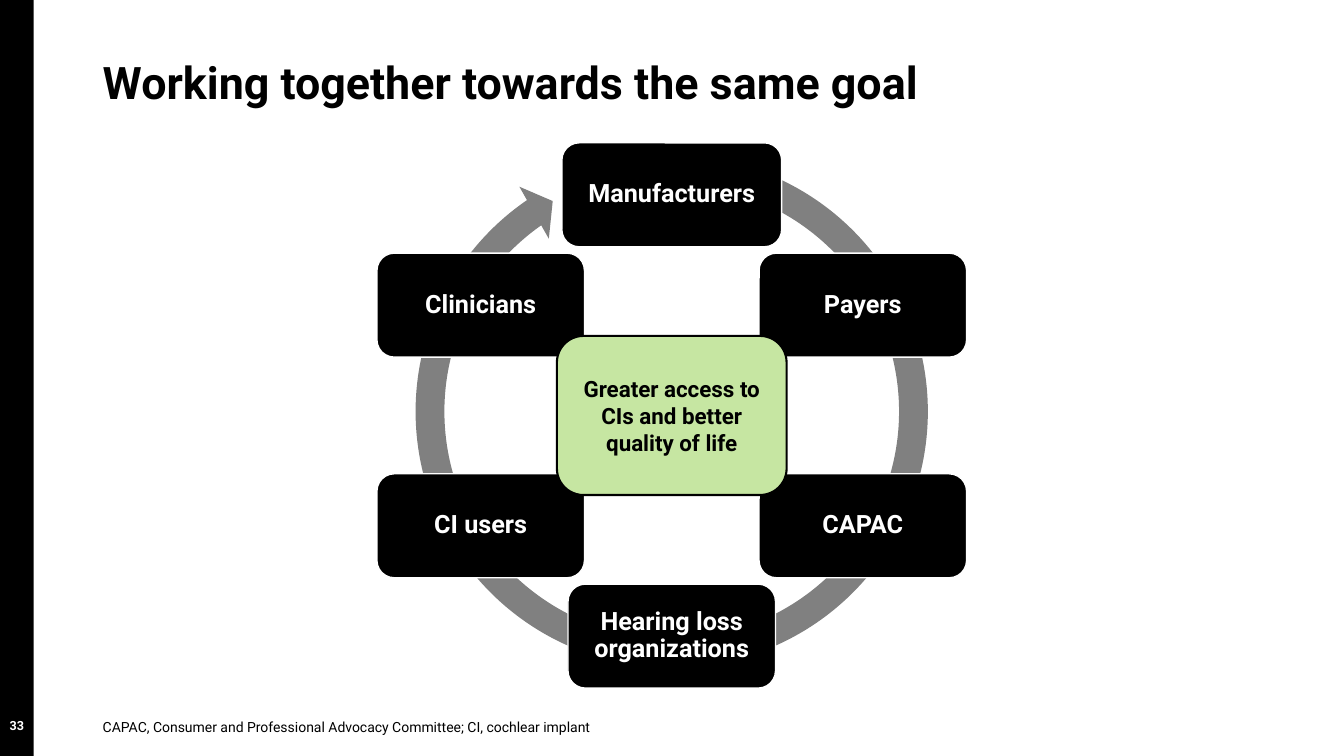
import math

import pptx
import pptx.dml.color
import pptx.enum.shapes
import pptx.enum.text
import pptx.util

Cm = pptx.util.Cm
Pt = pptx.util.Pt
SHAPE = pptx.enum.shapes.MSO_SHAPE
ALIGN = pptx.enum.text.PP_ALIGN
ANCHOR = pptx.enum.text.MSO_ANCHOR

BLACK, WHITE, GREY, GREEN = "000000", "FFFFFF", "808080", "C6E6A2"
STAKEHOLDERS = ["Manufacturers", "Payers", "CAPAC",
                "Hearing loss organizations", "CI users", "Clinicians"]


def rgb(value):
    return pptx.dml.color.RGBColor.from_string(value)


def write(sp, text, size=18, color=BLACK, bold=False, align=ALIGN.LEFT,
          anchor=ANCHOR.TOP, margins=(0.25, 0.13, 0.25, 0.13), spacing=None):
    tf = sp.text_frame
    tf.word_wrap = True
    tf.vertical_anchor = anchor
    (tf.margin_left, tf.margin_top,
     tf.margin_right, tf.margin_bottom) = [Cm(m) for m in margins]
    p = tf.paragraphs[0]
    p.alignment = align
    if spacing:
        p.line_spacing = spacing
    r = p.add_run()
    r.text = text
    r.font.name = "Roboto"
    r.font.size = Pt(size)
    r.font.bold = bold
    r.font.color.rgb = rgb(color)


def add_text(s, box, text, **fmt):
    write(s.shapes.add_textbox(*[Cm(v) for v in box]), text, **fmt)


def add_shape(s, kind, box, fill, line=None, weight=1):
    sp = s.shapes.add_shape(kind, *[Cm(v) for v in box])
    sp.shadow.inherit = False
    sp.fill.solid()
    sp.fill.fore_color.rgb = rgb(fill)
    if line:
        sp.line.color.rgb = rgb(line)
        sp.line.width = Pt(weight)
    else:
        sp.line.fill.background()
    return sp


def centred(cx, cy, w, h):
    return cx - w / 2, cy - h / 2, w, h


def sidebar(s, x, y, w, h):
    add_shape(s, SHAPE.RECTANGLE, (x, y, w, h), BLACK)
    add_text(s, (x, y + h - 1.6, w, 1.02), "33", size=9, color=WHITE,
             bold=True, align=ALIGN.CENTER, anchor=ANCHOR.BOTTOM,
             margins=(0, 0.13, 0, 0))


def headings(s, x, y, w, h):
    margins = (0.25, 0, 0.25, 0)
    add_text(s, (x, y, w, 2.24), "Working together towards the same goal",
             size=32, bold=True, margins=margins)
    add_text(s, (x, y + h - 0.97, w, 0.97),
             "CAPAC, Consumer and Professional Advocacy Committee; "
             "CI, cochlear implant",
             size=10, anchor=ANCHOR.BOTTOM, margins=margins)


def cycle(s, x, y, w, h):
    cx, cy = x + w / 2, y + h / 2
    node_w, node_h = 5.23, 2.62
    radius = (h - node_h) / 2

    # Ring with arrowhead; adjustments in percent
    ring = add_shape(s, SHAPE.CIRCULAR_ARROW,
                     centred(cx, cy - 0.1, 13.69, 13.69), GREY)
    for i, percent in enumerate((5.3, 312.6, 14117.7, 17191.9, 5.5)):
        ring.adjustments[i] = percent / 100

    # Stakeholders, clockwise from the top
    for i, name in enumerate(STAKEHOLDERS):
        angle = 2 * math.pi * i / len(STAKEHOLDERS)
        box = centred(cx + radius * math.sin(angle),
                      cy - radius * math.cos(angle),
                      node_w if i else 5.54, node_h)
        sp = add_shape(s, SHAPE.ROUNDED_RECTANGLE, box, BLACK, WHITE)
        write(sp, name, color=WHITE, bold=True, align=ALIGN.CENTER,
              anchor=ANCHOR.MIDDLE, margins=(0.18,) * 4, spacing=0.9)

    # Shared goal
    sp = add_shape(s, SHAPE.ROUNDED_RECTANGLE, centred(cx, cy, 5.79, 4.01),
                   GREEN, BLACK, 1.5)
    write(sp, "Greater access to CIs and better quality of life", size=16,
          bold=True, align=ALIGN.CENTER, anchor=ANCHOR.MIDDLE)


def main():
    prs = pptx.Presentation()
    prs.slide_width, prs.slide_height = Cm(33.87), Cm(19.05)
    s = prs.slides.add_slide(prs.slide_layouts[6])
    sidebar(s, 0, 0, 0.85, 19.05)
    headings(s, 2.34, 1.37, 28.78, 17.17)
    cycle(s, 9.5, 3.6, 14.86, 13.74)
    prs.save("out.pptx")


if __name__ == "__main__":
    main()
